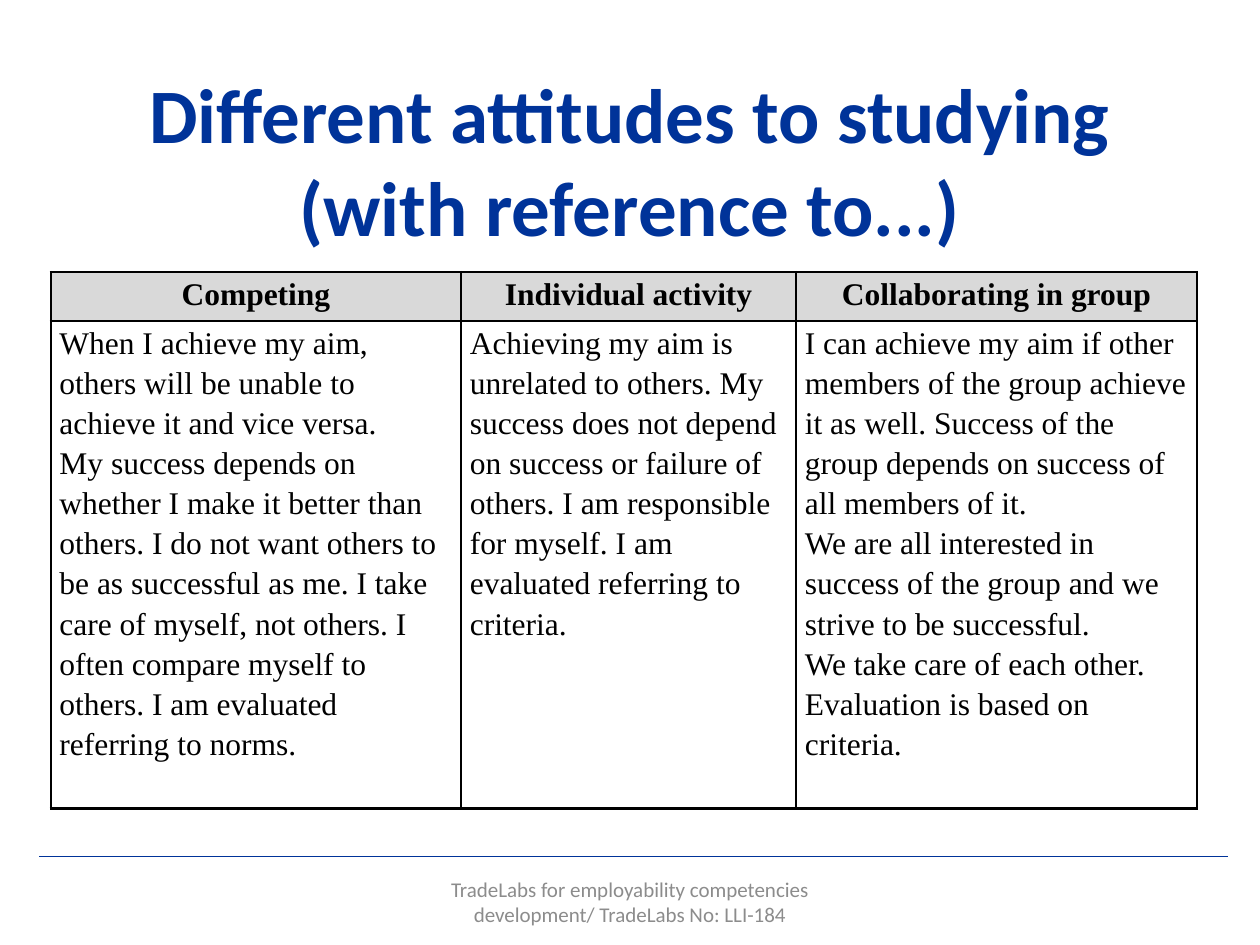
from lxml import etree
from pptx import Presentation
from pptx.dml.color import RGBColor
from pptx.enum.shapes import MSO_CONNECTOR
from pptx.enum.text import MSO_ANCHOR, PP_ALIGN
from pptx.oxml.ns import qn
from pptx.util import Pt

CENTER, LEFT = PP_ALIGN.CENTER, PP_ALIGN.LEFT
MIDDLE, TOP = MSO_ANCHOR.MIDDLE, MSO_ANCHOR.TOP
STRAIGHT = MSO_CONNECTOR.STRAIGHT
COLORS = {"blue": "003399", "header": "D9D9D9", "body": "FFFFFF", "black": "000000", "gray": "8C8C8C"}
COLUMNS = [
    (234.5, "Competing", [
        "When I achieve my aim, others will be unable to achieve it and vice versa.",
        "My success depends on whether I make it better than others. I do not want others to be "
        "as successful as me. I take care of myself, not others. I often compare myself to "
        "others. I am evaluated referring to norms.",
    ]),
    (191.5, "Individual activity", [
        "Achieving my aim is unrelated to others. My success does not depend on success or "
        "failure of others. I am responsible for myself. I am evaluated referring to criteria.",
    ]),
    (229, "Collaborating in group", [
        "I can achieve my aim if other members of the group achieve it as well. Success of the "
        "group depends on success of all members of it.",
        "We are all interested in success of the group and we strive to be successful.",
        "We take care of each other.",
        "Evaluation is based on criteria.",
    ]),
]


def set_font(p, name, size, color, bold=False):
    p.font.name = name
    p.font.size = Pt(size)
    p.font.bold = bold
    p.font.color.rgb = RGBColor.from_string(COLORS[color])


def set_borders(cell, widths):
    tcPr = cell._tc.get_or_add_tcPr()
    for i, (side, width) in enumerate(widths.items()):
        ln = etree.Element(qn(f"a:ln{side}"), w=str(Pt(width)))
        fill = etree.SubElement(ln, qn("a:solidFill"))
        etree.SubElement(fill, qn("a:srgbClr"), val=COLORS["black"])
        tcPr.insert(i, ln)


prs = Presentation()
prs.slide_width, prs.slide_height = Pt(720), Pt(540)
s = prs.slides.add_slide(prs.slide_layouts[5])

rule = s.shapes.add_connector(STRAIGHT, Pt(22.5), Pt(489.5), Pt(701.5), Pt(489.5))
rule.line.color.rgb = RGBColor.from_string(COLORS["blue"])
rule.line.width = Pt(0.75)
etree.SubElement(rule._element.spPr, qn("a:effectLst"))

title = s.shapes.title
title.left, title.top, title.width, title.height = Pt(36), Pt(21.6), Pt(648), Pt(191.5)
tf = title.text_frame
tf.word_wrap = True
tf.vertical_anchor = MIDDLE
p = tf.paragraphs[0]
p.text = "Different attitudes to studying (with reference to...)\v"
p.alignment = CENTER
set_font(p, "Calibri", 44, "blue", True)

table = s.shapes.add_table(2, len(COLUMNS), Pt(29), Pt(155.5), Pt(655), Pt(306.5)).table
table.rows[0].height, table.rows[1].height = Pt(28), Pt(278.5)
for c, (width, heading, body) in enumerate(COLUMNS):
    table.columns[c].width = Pt(width)
    for r, paragraphs in enumerate([[heading], body]):
        is_header = r == 0
        cell = table.cell(r, c)
        cell.margin_left = cell.margin_right = Pt(5)
        cell.margin_top = cell.margin_bottom = Pt(0)
        cell.vertical_anchor = TOP
        cell.fill.solid()
        cell.fill.fore_color.rgb = RGBColor.from_string(COLORS["header" if is_header else "body"])
        set_borders(cell, {
            "L": 1.5 if c == 0 else 1,
            "R": 1.5 if c == len(COLUMNS) - 1 else 1,
            "T": 1.5,
            "B": 1.5,
        })
        cell.text_frame.text = "\n".join(paragraphs)
        for p in cell.text_frame.paragraphs:
            p.alignment = CENTER if is_header else LEFT
            p.line_spacing = 1.15
            set_font(p, "Times New Roman", 18, "black", is_header)

footer = s.shapes.add_textbox(Pt(246), Pt(500.5), Pt(228), Pt(29))
tf = footer.text_frame
tf.word_wrap = True
tf.vertical_anchor = MIDDLE
p = tf.paragraphs[0]
p.text = "TradeLabs for employability competencies development/ TradeLabs No: LLI-184"
p.alignment = CENTER
set_font(p, "Calibri", 12, "gray")

prs.save("out.pptx")
